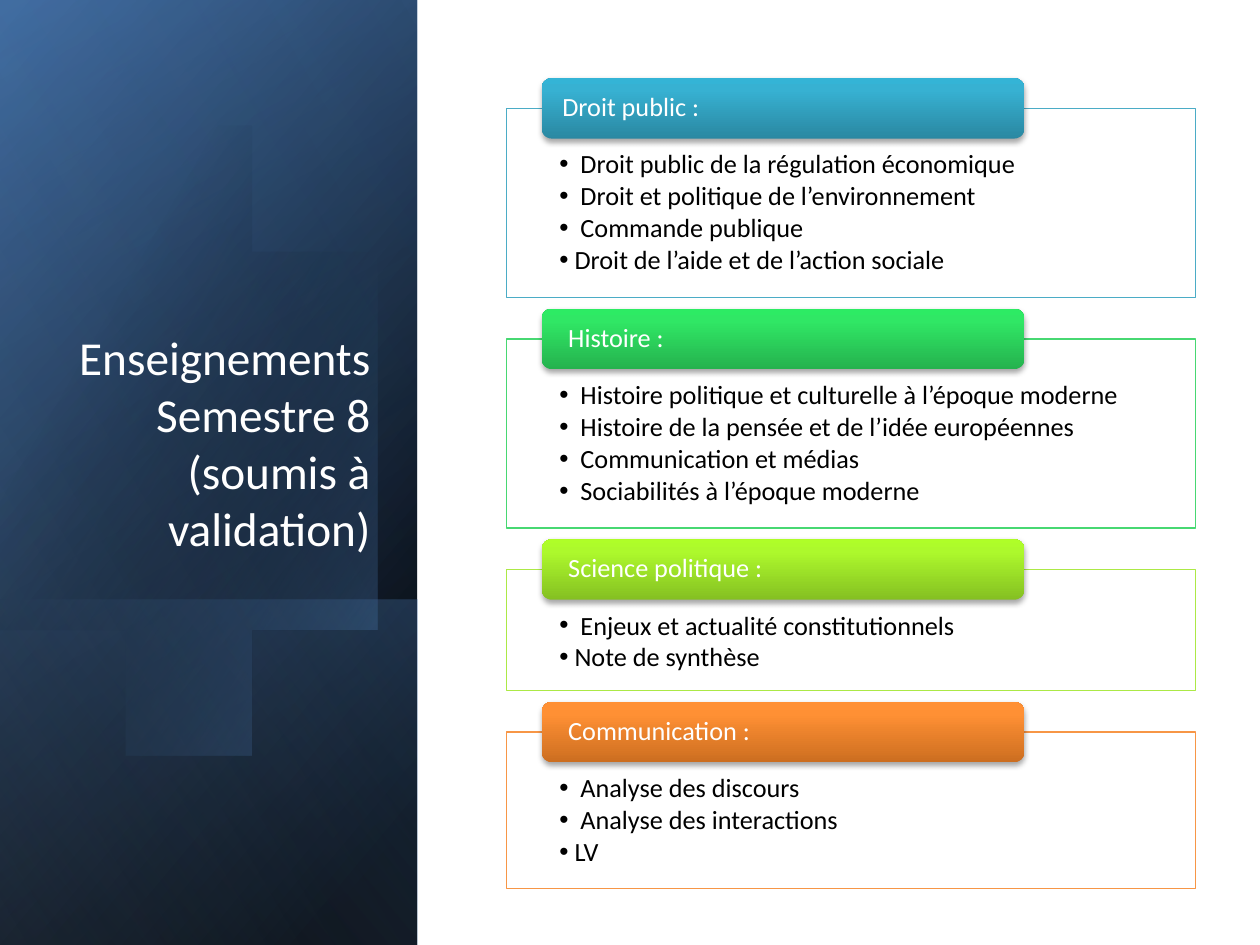
from lxml import etree
from pptx import Presentation
from pptx.dml.color import RGBColor
from pptx.enum.shapes import MSO_SHAPE as Shape
from pptx.enum.text import MSO_ANCHOR as Anchor, MSO_AUTO_SIZE as AutoSize, PP_ALIGN as Align
from pptx.oxml.ns import qn
from pptx.util import Inches, Pt

WHITE = RGBColor(0xFF, 0xFF, 0xFF)
BLACK = RGBColor(0x00, 0x00, 0x00)
NAVY = RGBColor(0x37, 0x60, 0x92)
BLUE = RGBColor(0x4F, 0x81, 0xBD)
PALE_BLUE = RGBColor(0x95, 0xB3, 0xD7)
TEAL = RGBColor(0x4B, 0xAC, 0xC6)
GREEN = RGBColor(0x47, 0xD8, 0x72)
LIME = RGBColor(0xAC, 0xE9, 0x46)
ORANGE = RGBColor(0xF7, 0x96, 0x46)
TEAL_TAB = [RGBColor(0x2A, 0x88, 0xA2), RGBColor(0x37, 0xB1, 0xD2), RGBColor(0x34, 0xB4, 0xD6)]
GREEN_TAB = [RGBColor(0x25, 0xB2, 0x4E), RGBColor(0x30, 0xE7, 0x65), RGBColor(0x2D, 0xEB, 0x64)]
LIME_TAB = [RGBColor(0x85, 0xC0, 0x22), RGBColor(0xAD, 0xF9, 0x2C), RGBColor(0xAF, 0xFE, 0x28)]
ORANGE_TAB = [RGBColor(0xCC, 0x6E, 0x20), RGBColor(0xFF, 0x90, 0x34), RGBColor(0xFF, 0x91, 0x36)]

# Frame colour, tab gradient, heading, frame height in rows, courses
SECTIONS = [
    (TEAL, TEAL_TAB, "Droit public :", 15, [
        " Droit public de la régulation économique",
        " Droit et politique de l’environnement",
        " Commande publique",
        "Droit de l’aide et de l’action sociale"]),
    (GREEN, GREEN_TAB, " Histoire :", 15, [
        " Histoire politique et culturelle à l’époque moderne",
        " Histoire de la pensée et de l’idée européennes",
        " Communication et médias",
        " Sociabilités à l’époque moderne"]),
    (LIME, LIME_TAB, " Science politique :", 9.6, [
        " Enjeux et actualité constitutionnels",
        "Note de synthèse"]),
    (ORANGE, ORANGE_TAB, " Communication :", 12.4, [
        " Analyse des discours",
        " Analyse des interactions",
        "LV"]),
]

# Side ellipse, in inches: start, then Bezier segments, then the cut left edge
ELLIPSE_START = (0.96, 1.14)
ELLIPSE_CURVES = [
    [(1.71, 1.22), (2.44, 1.92), (2.73, 2.9)],
    [(3.07, 4.12), (2.62, 5.31), (1.71, 5.57)],
    [(1.14, 5.74), (0.53, 5.5), (0.07, 5)],
]
ELLIPSE_EDGE = [(-0.03, 4.88), (-0.25, 1.66), (-0.15, 1.54), (0.45, 1.18)]


def sub(parent, tag, **attrs):
    return etree.SubElement(parent, qn(tag), {k: str(v) for k, v in attrs.items()})


def bezier(p0, p1, p2, p3, steps=16):
    for i in range(1, steps + 1):
        t = i / steps
        u = 1 - t
        yield tuple(u**3 * a + 3 * u * u * t * b + 3 * u * t * t * c + t**3 * d
                    for a, b, c, d in zip(p0, p1, p2, p3))


class Deck:
    """Style and current slide; lengths are on a grid of 100 columns by 75 rows."""
    font = "Calibri"
    cell = 0.1

    def __init__(self):
        self.prs = Presentation()
        self.prs.slide_width, self.prs.slide_height = self.size(100, 75)
        self.s = self.prs.slides.add_slide(self.prs.slide_layouts[5])

    def size(self, *cells):
        return [Inches(c * self.cell) for c in cells]

    def shape(self, kind, *box):
        sp = self.s.shapes.add_shape(kind, *self.size(*box))
        sp.shadow.inherit = False
        sp.line.fill.background()
        return sp

    def gradient(self, sp, stops, angle):
        """Stops are (position %, colour, opacity %)."""
        sp.fill.gradient()
        grad = sp._element.spPr.find(qn("a:gradFill"))
        for child in list(grad):
            grad.remove(child)
        gs_lst = sub(grad, "a:gsLst")
        for pos, color, opacity in stops:
            gs = sub(gs_lst, "a:gs", pos=pos * 1000)
            sub(sub(gs, "a:srgbClr", val=color), "a:alpha", val=opacity * 1000)
        sub(grad, "a:lin", ang=angle * 60000, scaled=0)

    def panel(self, x, y, w, h, stops, angle):
        """Mirrored rectangle turned by 90°, covering the given box."""
        sp = self.shape(Shape.RECTANGLE, x + (w - h) / 2, y + (h - w) / 2, h, w)
        sp.rotation = 90
        sp._element.spPr.find(qn("a:xfrm")).set("flipH", "1")
        self.gradient(sp, stops, angle)

    def ellipse(self, start, curves, edge, stops, angle):
        points = [start]
        for curve in curves:
            points += bezier(points[-1], *curve)
        builder = self.s.shapes.build_freeform(*start, scale=Inches(1))
        builder.add_line_segments(points[1:] + edge, close=True)
        sp = builder.convert_to_shape()
        sp.shadow.inherit = False
        sp.line.fill.background()
        self.gradient(sp, stops, angle)

    def format(self, p, size, color, align=Align.LEFT):
        p.alignment = align
        for r in p.runs:
            r.font.name, r.font.size, r.font.color.rgb = self.font, Pt(size), color

    def frame_text(self, sp, insets, anchor):
        tf = sp.text_frame
        tf.word_wrap, tf.auto_size, tf.vertical_anchor = True, AutoSize.NONE, anchor
        tf.margin_left, tf.margin_top, tf.margin_right, tf.margin_bottom = self.size(*insets)
        return tf

    def title(self, text, *box):
        sp = self.s.shapes.title
        self.s.shapes._spTree.append(sp._element)  # in front of the panels
        sp.left, sp.top, sp.width, sp.height = self.size(*box)
        tf = self.frame_text(sp, (1, 0.5, 1, 0.5), Anchor.BOTTOM)
        tf.text = text
        self.format(tf.paragraphs[0], 27, WHITE, Align.RIGHT)

    def bullet_frame(self, color, items, *box):
        sp = self.shape(Shape.RECTANGLE, *box)
        sp.fill.solid()
        sp.fill.fore_color.rgb = WHITE
        sub(sp._element.spPr.find(qn("a:solidFill"))[0], "a:alpha", val=90000)
        sp.line.color.rgb, sp.line.width = color, Pt(0.75)
        tf = self.frame_text(sp, (4.2, 3.4, 4.2, 1.2), Anchor.TOP)
        tf.text = "\n".join(items)
        for p in tf.paragraphs:
            self.format(p, 15, BLACK)
            p.level, p.line_spacing, p.space_after = 1, 0.9, Pt(2)
            pPr = p._p.get_or_add_pPr()
            pPr.set("marL", str(Inches(0.12)))
            pPr.set("indent", str(-Inches(0.12)))
            sub(pPr, "a:buFont", typeface="Arial")
            sub(pPr, "a:buChar", char="•")

    def tab(self, colors, text, *box):
        sp = self.shape(Shape.ROUNDED_RECTANGLE, *box)
        self.gradient(sp, [(pos, c, 100) for pos, c in zip((0, 80, 100), colors)], 270)
        shadow = sub(sp._element.spPr.find(qn("a:effectLst")), "a:outerShdw", blurRad=Pt(3.1),
                     dist=Pt(1.8), dir=90 * 60000, rotWithShape=0)
        sub(sub(shadow, "a:srgbClr", val=BLACK), "a:alpha", val=35000)
        tf = self.frame_text(sp, (1.4, 0, 1.4, 0), Anchor.MIDDLE)
        tf.text = text
        tf.paragraphs[0].line_spacing = 0.9
        self.format(tf.paragraphs[0], 15, WHITE)


def main():
    deck = Deck()

    # Blue side panel
    side = (0, 0, 33.1, 75)
    deck.panel(*side, [(8, BLACK, 100), (100, NAVY, 100)], 50)
    deck.panel(*side, [(0, BLACK, 0), (99, BLUE, 46)], 30)
    deck.panel(0, 47.6, 33.1, 27.4, [(2, BLUE, 29), (100, BLACK, 30)], 130)
    deck.ellipse(ELLIPSE_START, ELLIPSE_CURVES, ELLIPSE_EDGE,
                 [(29, BLACK, 0), (100, BLUE, 43)], 30)
    deck.panel(*side, [(0, BLACK, 0), (99, PALE_BLUE, 11)], 120)
    deck.title("Enseignements\vSemestre 8 (soumis à validation)", 4.8, 18.4, 25.6, 26.2)

    # Course sections, each tab centred on the top edge of its frame
    top, gap, tab_height = 8.6, 3.3, 4.8
    for color, tab_colors, heading, height, items in SECTIONS:
        deck.bullet_frame(color, items, 40.2, top, 54.7, height)
        deck.tab(tab_colors, heading, 43, top - tab_height / 2, 38.3, tab_height)
        top += height + gap

    deck.prs.save("out.pptx")


if __name__ == "__main__":
    main()
